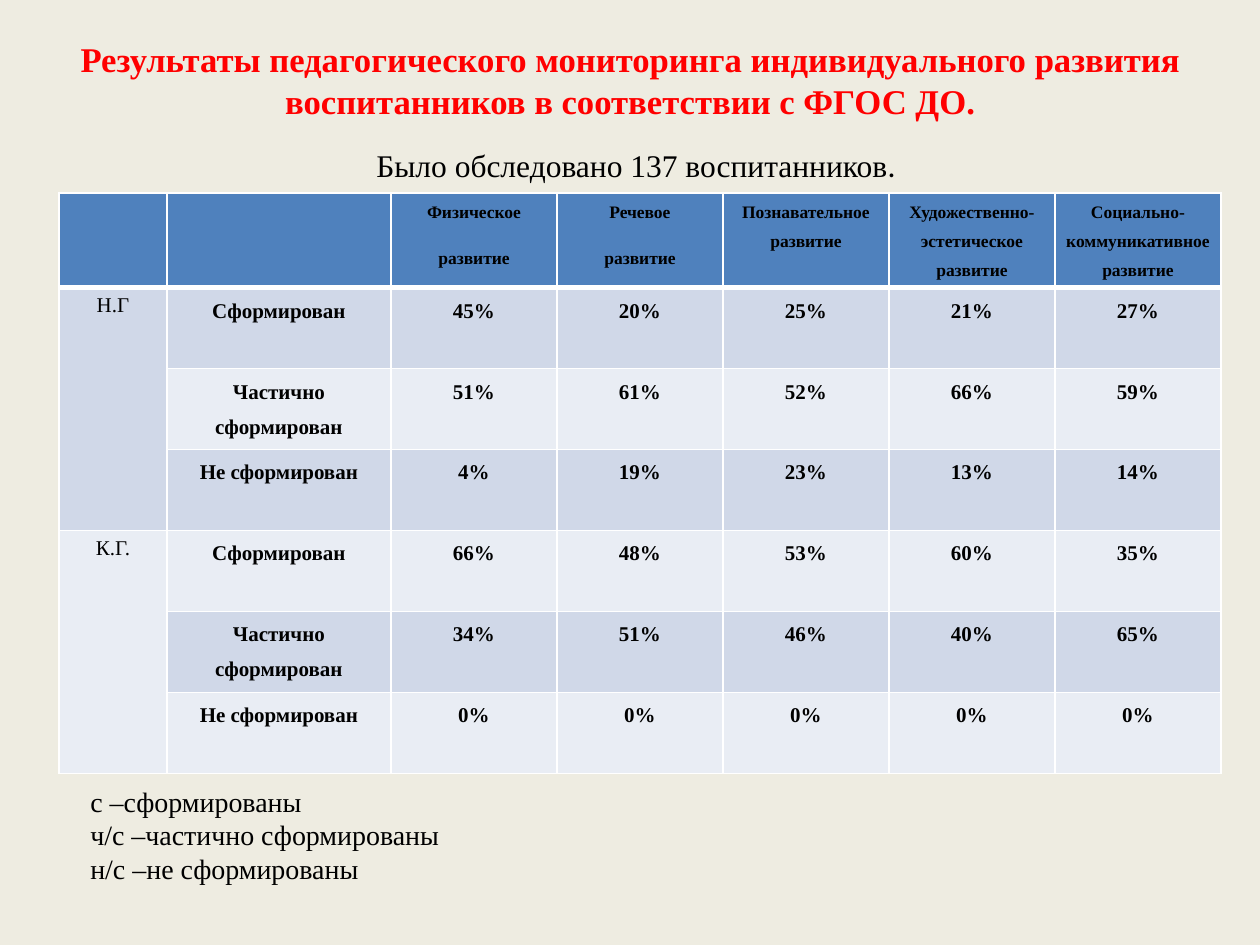
from lxml.etree import SubElement
from pptx import Presentation
from pptx.dml.color import RGBColor
from pptx.enum.text import MSO_ANCHOR, MSO_AUTO_SIZE, PP_ALIGN
from pptx.oxml.ns import qn
from pptx.util import Emu, Pt

TITLE = ("Результаты педагогического мониторинга индивидуального развития "
         "воспитанников в соответствии с ФГОС ДО.")
SUBTITLE = "Было обследовано 137 воспитанников"
LEGEND = ["с –сформированы", "ч/с –частично сформированы", "н/с –не сформированы"]
HEADERS = [
    ["Физическое", "развитие"],
    ["Речевое", "развитие"],
    ["Познавательное развитие"],
    ["Художественно-эстетическое развитие"],
    ["Социально-коммуникативное развитие"],
]
LEVELS = ["Сформирован", "Частично сформирован", "Не сформирован"]
RESULTS = {
    "Н.Г": [(45, 20, 25, 21, 27), (51, 61, 52, 66, 59), (4, 19, 23, 13, 14)],
    "К.Г.": [(66, 48, 53, 60, 35), (34, 51, 46, 40, 65), (0, 0, 0, 0, 0)],
}

COLUMN_WIDTHS = [108, 224] + [166] * len(HEADERS)
ROW_HEIGHTS = [94] + [81] * (len(RESULTS) * len(LEVELS))

BACKGROUND = RGBColor(0xEE, 0xEC, 0xE1)
RED = RGBColor(0xFF, 0, 0)
BLACK = RGBColor(0, 0, 0)
HEADER_FILL = RGBColor(0x4F, 0x81, 0xBD)
BANDS = [RGBColor(0xE9, 0xED, 0xF4), RGBColor(0xD0, 0xD8, 0xE8)]
BORDER = RGBColor(0xFF, 0xFF, 0xFF)
SERIF = "Times New Roman"
SANS = "Calibri"


def px(count):
    return Emu(round(count * 914400 / 126))


def place(shape, left, top, width, height):
    shape.left, shape.top = px(left), px(top)
    shape.width, shape.height = px(width), px(height)


def add_span(para, text, size, color=BLACK, bold=False, font=SERIF):
    span = para.add_run()
    span.text = text
    span.font.size, span.font.name = Pt(size), font
    span.font.bold, span.font.color.rgb = bold, color


def write(frame, lines, align=PP_ALIGN.CENTER, spacing=None, after=None, **style):
    """Put each line in its own paragraph, with one character style."""
    frame.word_wrap = True
    for index, line in enumerate(lines):
        para = frame.add_paragraph() if index else frame.paragraphs[0]
        para.alignment = align
        para.space_before = Pt(0)
        if spacing:
            para.line_spacing = spacing
        if after:
            para.space_after = Pt(after)
        add_span(para, line, **style)


def style_cell(cell, fill, bottom=1):
    """Draw the white borders, then the fill that must follow them."""
    properties = cell._tc.get_or_add_tcPr()
    for side, width in (("L", 1), ("R", 1), ("T", 1), ("B", bottom)):
        line = SubElement(properties, qn(f"a:ln{side}"), w=str(Pt(width)))
        solid = SubElement(line, qn("a:solidFill"))
        SubElement(solid, qn("a:srgbClr"), val=str(BORDER))
    cell.fill.solid()
    cell.fill.fore_color.rgb = fill


def write_cell(cell, lines, size):
    cell.margin_left = cell.margin_right = px(9)
    cell.margin_top = cell.margin_bottom = 0
    write(cell.text_frame, lines, size=size, bold=True, spacing=1.5, after=10)


def add_results_table(slide):
    table = slide.shapes.add_table(
        len(ROW_HEIGHTS), len(COLUMN_WIDTHS), px(59), px(193),
        px(sum(COLUMN_WIDTHS)), px(sum(ROW_HEIGHTS))).table
    for column, width in zip(table.columns, COLUMN_WIDTHS):
        column.width = px(width)
    for row, height in zip(table.rows, ROW_HEIGHTS):
        row.height = px(height)

    for number, row in enumerate(table.rows):
        for cell in row.cells:
            if number:
                style_cell(cell, BANDS[number % 2])
            else:
                style_cell(cell, HEADER_FILL, bottom=3)

    for column, lines in enumerate(HEADERS, 2):
        write_cell(table.cell(0, column), lines, 10)
    for group, (name, records) in enumerate(RESULTS.items()):
        first = 1 + group * len(LEVELS)
        head = table.cell(first, 0)
        head.merge(table.cell(first + len(LEVELS) - 1, 0))
        write(head.text_frame, [name], size=12)
        for number, (level, values) in enumerate(zip(LEVELS, records), first):
            texts = [level] + [f"{value}%" for value in values]
            for column, text in enumerate(texts, 1):
                write_cell(table.cell(number, column), [text], 12)


def main():
    deck = Presentation()
    deck.slide_width, deck.slide_height = px(1260), px(945)
    slide = deck.slides.add_slide(deck.slide_layouts[1])
    slide.background.fill.solid()
    slide.background.fill.fore_color.rgb = BACKGROUND

    title, body = slide.placeholders
    place(title, 63, 38, 1134, 157)
    title.text_frame.auto_size = MSO_AUTO_SIZE.NONE
    title.text_frame.vertical_anchor = MSO_ANCHOR.TOP
    title.text_frame.margin_top = 0
    write(title.text_frame, [TITLE], size=19.8, color=RED, bold=True)

    place(body, 69, 137, 1134, 707)
    body.text_frame.auto_size = MSO_AUTO_SIZE.NONE
    body.text_frame.margin_top = px(9)
    para = body.text_frame.paragraphs[0]
    properties = para._p.get_or_add_pPr()
    properties.set("marL", "0")
    properties.set("indent", "0")
    SubElement(properties, qn("a:buNone"))
    write(body.text_frame, [SUBTITLE], size=18)
    add_span(para, ".", 18, font=SANS)

    legend = slide.shapes.add_textbox(px(78), px(777), px(1082), px(115))
    legend.text_frame.vertical_anchor = MSO_ANCHOR.MIDDLE
    write(legend.text_frame, LEGEND, align=PP_ALIGN.LEFT, size=16)

    add_results_table(slide)
    deck.save("out.pptx")


if __name__ == "__main__":
    main()
